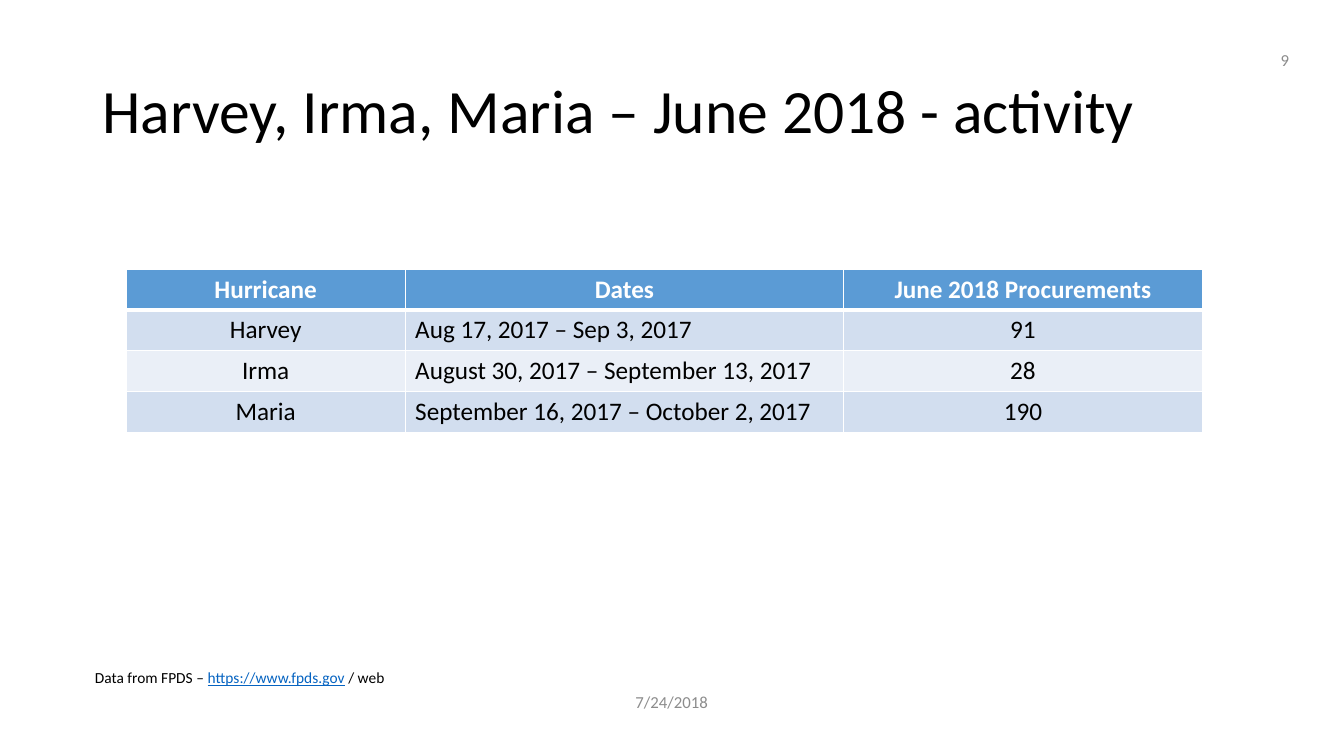
import pptx
import pptx.dml.color
import pptx.enum.text
import pptx.oxml
import pptx.oxml.ns
import pptx.util

Cm = pptx.util.Cm
ALIGN = pptx.enum.text.PP_ALIGN
ANCHOR = pptx.enum.text.MSO_ANCHOR

COLORS = {
    "text": "000000",
    "muted": "8C8C8C",
    "link": "0563C1",
    "header": "5B9BD5",
    "band_dark": "D2DEEF",
    "band_light": "EAEFF7",
    "white": "FFFFFF",
}


class SlideBuilder:
    """Holds the style and the current slide."""

    font_name = "Calibri"

    def __init__(self, prs):
        self.s = prs.slides.add_slide(prs.slide_layouts[5])

    def rgb(self, color):
        return pptx.dml.color.RGBColor.from_string(COLORS[color])

    def style(self, p, size, color="text", align=ALIGN.LEFT, bold=False):
        p.alignment = align
        p.font.name = self.font_name
        p.font.size = pptx.util.Pt(size)
        p.font.bold = bold
        p.font.color.rgb = self.rgb(color)

    def title(self, text, left, top, width, height):
        sp = self.s.shapes.title
        sp.left, sp.top, sp.width, sp.height = left, top, width, height
        tf = sp.text_frame
        tf.text = text
        tf.word_wrap = True
        tf.auto_size = pptx.enum.text.MSO_AUTO_SIZE.NONE
        tf.vertical_anchor = ANCHOR.MIDDLE
        p = tf.paragraphs[0]
        self.style(p, 44)
        p.line_spacing = 0.9

    def text(self, runs, left, top, width, height, size, color="text",
             align=ALIGN.LEFT, anchor=ANCHOR.MIDDLE):
        """Runs are (text, is_link) pairs."""
        tf = self.s.shapes.add_textbox(left, top, width, height).text_frame
        tf.word_wrap = True
        tf.vertical_anchor = anchor
        p = tf.paragraphs[0]
        self.style(p, size, color, align)
        for text, is_link in runs:
            r = p.add_run()
            r.text = text
            if is_link:
                r.font.underline = True
                r.font.color.rgb = self.rgb("link")

    def border(self, side, width):
        return pptx.oxml.parse_xml(
            f'<a:{side} {pptx.oxml.ns.nsdecls("a")} w="{pptx.util.Pt(width)}">'
            f'<a:solidFill><a:srgbClr val="{COLORS["white"]}"/></a:solidFill>'
            f'</a:{side}>')

    def table(self, rows, left, top, col_widths, row_height, aligns):
        table = self.s.shapes.add_table(
            len(rows), len(col_widths), left, top,
            sum(col_widths), row_height * len(rows)).table
        for column, width in zip(table.columns, col_widths):
            column.width = width
        for i, values in enumerate(rows):
            table.rows[i].height = row_height
            for j, value in enumerate(values):
                self.cell(table.cell(i, j), value, i, aligns[j])

    def cell(self, cell, value, row, align):
        is_header = row == 0
        cell.text = value
        if is_header:
            fill, color, align = "header", "white", ALIGN.CENTER
        else:
            fill, color = ("band_dark" if row % 2 else "band_light"), "text"
        self.style(cell.text_frame.paragraphs[0], 18, color, align, is_header)
        # Borders come before the fill in the cell properties
        tc_pr = cell._tc.get_or_add_tcPr()
        widths = {"lnL": 1, "lnR": 1, "lnT": 3 if row == 1 else 1,
                  "lnB": 3 if is_header else 1}
        for side, width in widths.items():
            tc_pr.append(self.border(side, width))
        cell.fill.solid()
        cell.fill.fore_color.rgb = self.rgb(fill)


def main():
    prs = pptx.Presentation()
    prs.slide_width, prs.slide_height = Cm(33.87), Cm(19.05)
    b = SlideBuilder(prs)

    # Title
    b.title("Harvey, Irma, Maria – June 2018 - activity",
            Cm(2.33), Cm(1.01), Cm(29.21), Cm(3.68))

    # Source line, date and slide number
    b.text([("Data from FPDS – ", False), ("https://www.fpds.gov", True),
            (" / web", False)],
           Cm(2.14), Cm(16.72), Cm(21.16), Cm(0.73), 11, anchor=ANCHOR.TOP)
    b.text([("7/24/2018", False)], Cm(13.12), Cm(17.18), Cm(7.62), Cm(1.01),
           12, "muted", ALIGN.CENTER)
    b.text([("9", False)], Cm(25.12), Cm(1.01), Cm(7.62), Cm(1.01),
           12, "muted", ALIGN.RIGHT)

    # Procurement table
    b.table([
        ("Hurricane", "Dates", "June 2018 Procurements"),
        ("Harvey", "Aug 17, 2017 – Sep 3, 2017", "91"),
        ("Irma", "August 30, 2017 – September 13, 2017", "28"),
        ("Maria", "September 16, 2017 – October 2, 2017", "190"),
    ], Cm(3.18), Cm(6.78), [Cm(7.03), Cm(11.05), Cm(9.04)], Cm(1.03),
        [ALIGN.CENTER, ALIGN.LEFT, ALIGN.CENTER])

    prs.save("out.pptx")


if __name__ == "__main__":
    main()
